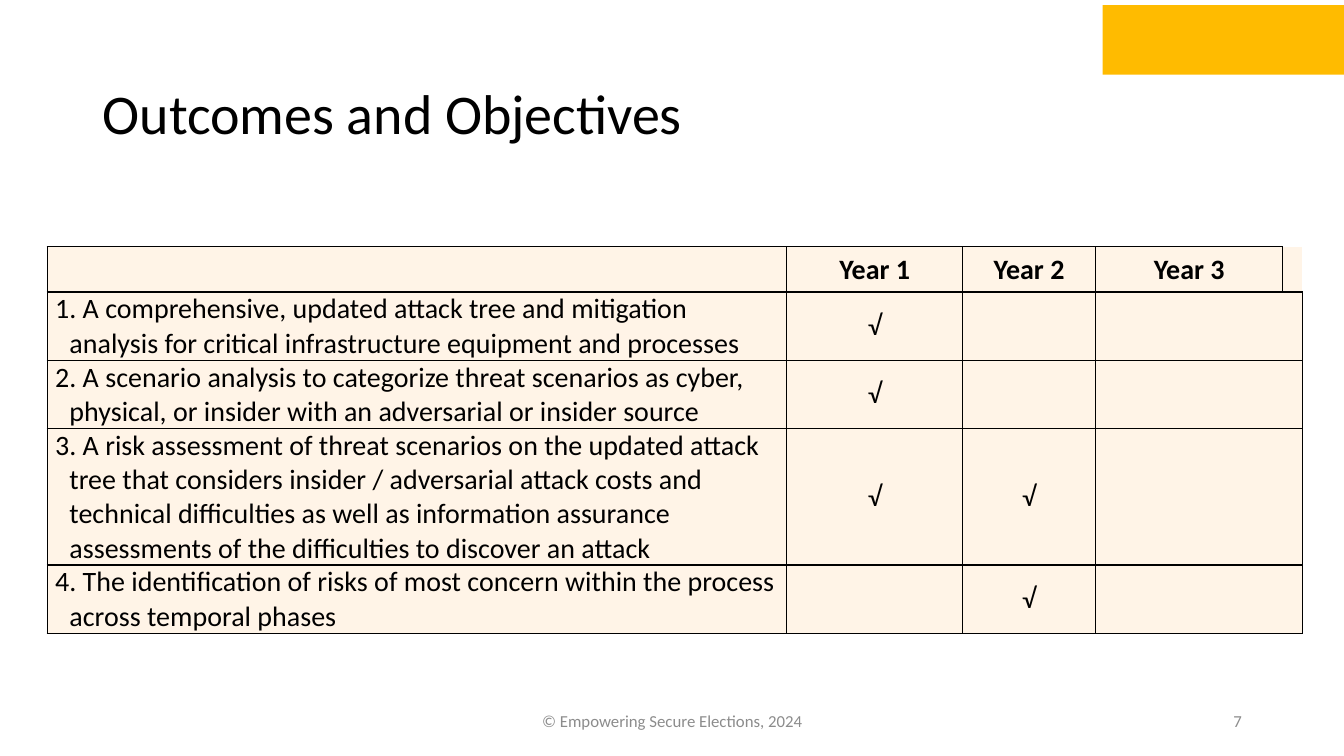
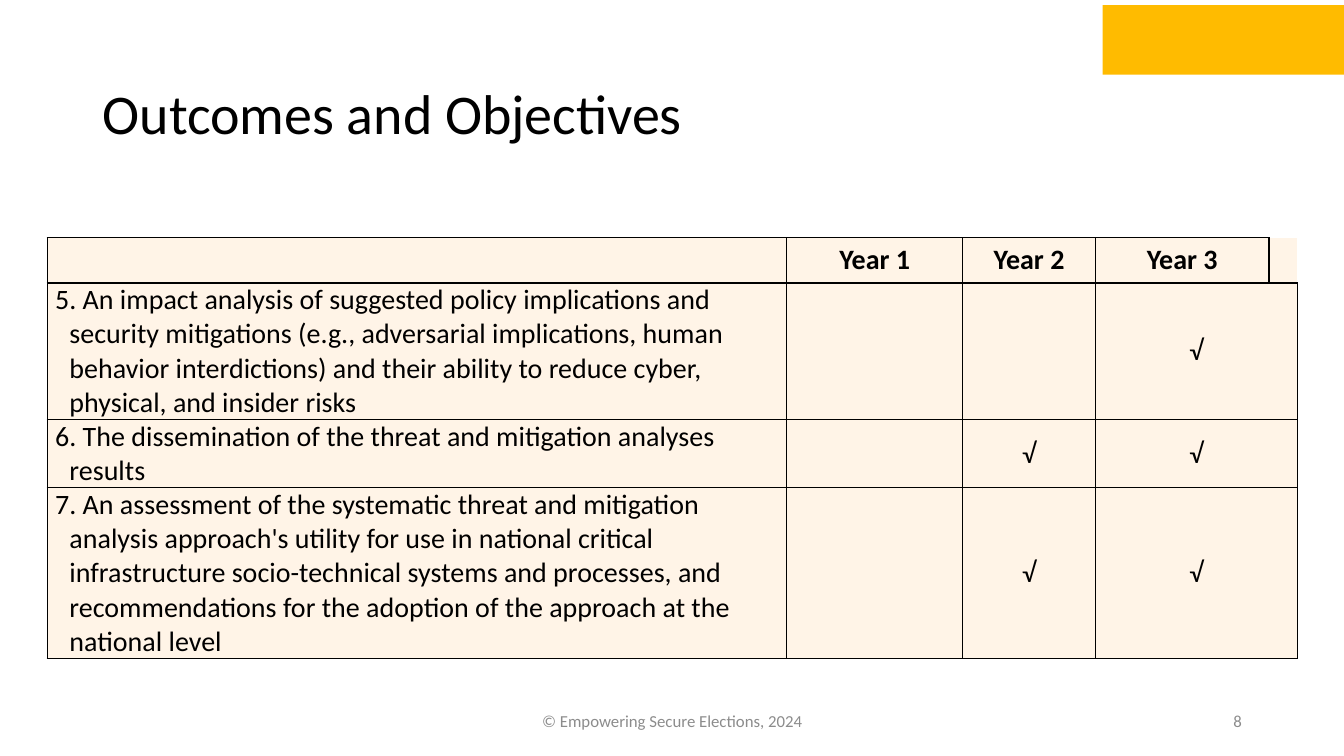
"""Build two slides that schedule project outcomes by year."""
from pptx import Presentation
from pptx.dml.color import RGBColor as RGB
from pptx.enum.shapes import MSO_SHAPE as SHAPE
from pptx.enum.text import MSO_ANCHOR as ANCHOR, PP_ALIGN as ALIGN
from pptx.oxml import parse_xml
from pptx.oxml.ns import nsdecls
from pptx.util import Cm, Pt

COLORS = {"band": "FFBB00", "text": "000000", "muted": "8C8C8C",
          "cell": "FFF4E7", "border": "000000", "blank": "FFFFFF"}
FONT = "Calibri"
TITLE = "Outcomes and Objectives"
FOOTER = "© Empowering Secure Elections, 2024"
YEARS = (1, 2, 3)
CHECK = "√"
TABLE_LEFT = 1.19
FIXED_COLS = (18.64, 4.43, 3.35)
LAST_COLS = 5.08
HEADER_HEIGHT = 1.14
LINE_HEIGHT = 0.86
HANGING = Cm(0.36)

FIRST_OUTCOMES = [
    ("1. A comprehensive, updated attack tree and mitigation analysis for "
     "critical infrastructure equipment and processes", 2, {1}),
    ("2. A scenario analysis to categorize threat scenarios as cyber, "
     "physical, or insider with an adversarial or insider source", 2, {1}),
    ("3. A risk assessment of threat scenarios on the updated attack tree "
     "that considers insider / adversarial attack costs and technical "
     "difficulties as well as information assurance assessments of the "
     "difficulties to discover an attack", 4, {1, 2}),
    ("4. The identification of risks of most concern within the process "
     "across temporal phases", 2, {2}),
]
LAST_OUTCOMES = [
    ("5. An impact analysis of suggested policy implications and security "
     "mitigations (e.g., adversarial implications, human behavior "
     "interdictions) and their ability to reduce cyber, physical, and "
     "insider risks", 4, {3}),
    ("6. The dissemination of the threat and mitigation analyses results",
     2, {2, 3}),
    ("7. An assessment of the systematic threat and mitigation analysis "
     "approach's utility for use in national critical infrastructure "
     "socio-technical systems and processes, and recommendations for the "
     "adoption of the approach at the national level", 5, {2, 3}),
]


def color(name):
    return RGB.from_string(COLORS[name])


def write(tf, text, size, align=ALIGN.LEFT, ink="text", bold=False):
    p = tf.paragraphs[0]
    p.text = text
    p.alignment = align
    p.font.name = FONT
    p.font.size = Pt(size)
    p.font.bold = bold
    p.font.color.rgb = color(ink)
    return p


def add_text(s, box, text, size, anchor=ANCHOR.MIDDLE, **style):
    tf = s.shapes.add_textbox(*map(Cm, box)).text_frame
    tf.word_wrap = True
    tf.vertical_anchor = anchor
    return write(tf, text, size, **style)


def add_band(s):
    sp = s.shapes.add_shape(SHAPE.RECTANGLE, *map(Cm, (27.79, 0.13, 6.08, 1.75)))
    sp.shadow.inherit = False
    sp.fill.solid()
    sp.fill.fore_color.rgb = color("band")
    sp.line.fill.background()


def add_frame(s, number):
    add_band(s)
    title = add_text(s, (2.34, 0.13, 23.62, 3.68), TITLE, 40, ANCHOR.BOTTOM)
    title.line_spacing = 0.9
    add_text(s, (11.23, 17.65, 11.43, 1.02), FOOTER, 12,
             align=ALIGN.CENTER, ink="muted")
    add_text(s, (23.93, 17.65, 7.62, 1.02), str(number), 12,
             align=ALIGN.RIGHT, ink="muted")


def set_borders(cell, blank_sides=""):
    tc_pr = cell._tc.get_or_add_tcPr()
    for i, side in enumerate("LRTB"):
        hue = COLORS["blank" if side in blank_sides else "border"]
        tc_pr.insert(i, parse_xml(
            f'<a:ln{side} {nsdecls("a")} w="12700"><a:solidFill>'
            f'<a:srgbClr val="{hue}"/></a:solidFill></a:ln{side}>'))


def style_cell(cell, blank_sides=""):
    cell.fill.solid()
    cell.fill.fore_color.rgb = color("cell")
    cell.vertical_anchor = ANCHOR.MIDDLE
    cell.margin_left = cell.margin_right = Cm(0.2)
    cell.margin_top = cell.margin_bottom = 0
    set_borders(cell, blank_sides)


def add_schedule(s, top, stub, outcomes):
    widths = (*FIXED_COLS, LAST_COLS - stub, stub)
    heights = (HEADER_HEIGHT, *(LINE_HEIGHT * n for _, n, _ in outcomes))
    box = (TABLE_LEFT, top, sum(widths), sum(heights))
    table = s.shapes.add_table(len(heights), len(widths), *map(Cm, box)).table
    table.first_row = table.horz_banding = False
    for col, width in zip(table.columns, widths):
        col.width = Cm(width)
    for row, height in zip(table.rows, heights):
        row.height = Cm(height)
    stub_cell = table.cell(0, len(widths) - 1)
    for cell in table.iter_cells():
        style_cell(cell, "RT" if cell == stub_cell else "")
    for year in YEARS:
        write(table.cell(0, year).text_frame, f"Year {year}", 20,
              ALIGN.CENTER, bold=True)
    for i, (outcome, _, years) in enumerate(outcomes, 1):
        p = write(table.cell(i, 0).text_frame, outcome, 20)
        p_pr = p._p.get_or_add_pPr()
        p_pr.set("marL", str(HANGING))
        p_pr.set("indent", str(-HANGING))
        table.cell(i, 3).merge(table.cell(i, 4))
        for year in years:
            write(table.cell(i, year).text_frame, CHECK, 20, ALIGN.CENTER)


def main():
    prs = Presentation()
    prs.slide_width, prs.slide_height = Cm(33.87), Cm(19.05)
    schedules = ((6.22, 0.36, FIRST_OUTCOMES), (5.99, 0.71, LAST_OUTCOMES))
    for number, schedule in enumerate(schedules, 7):
        s = prs.slides.add_slide(prs.slide_layouts[6])
        add_frame(s, number)
        add_schedule(s, *schedule)
    prs.save("out.pptx")


if __name__ == "__main__":
    main()
